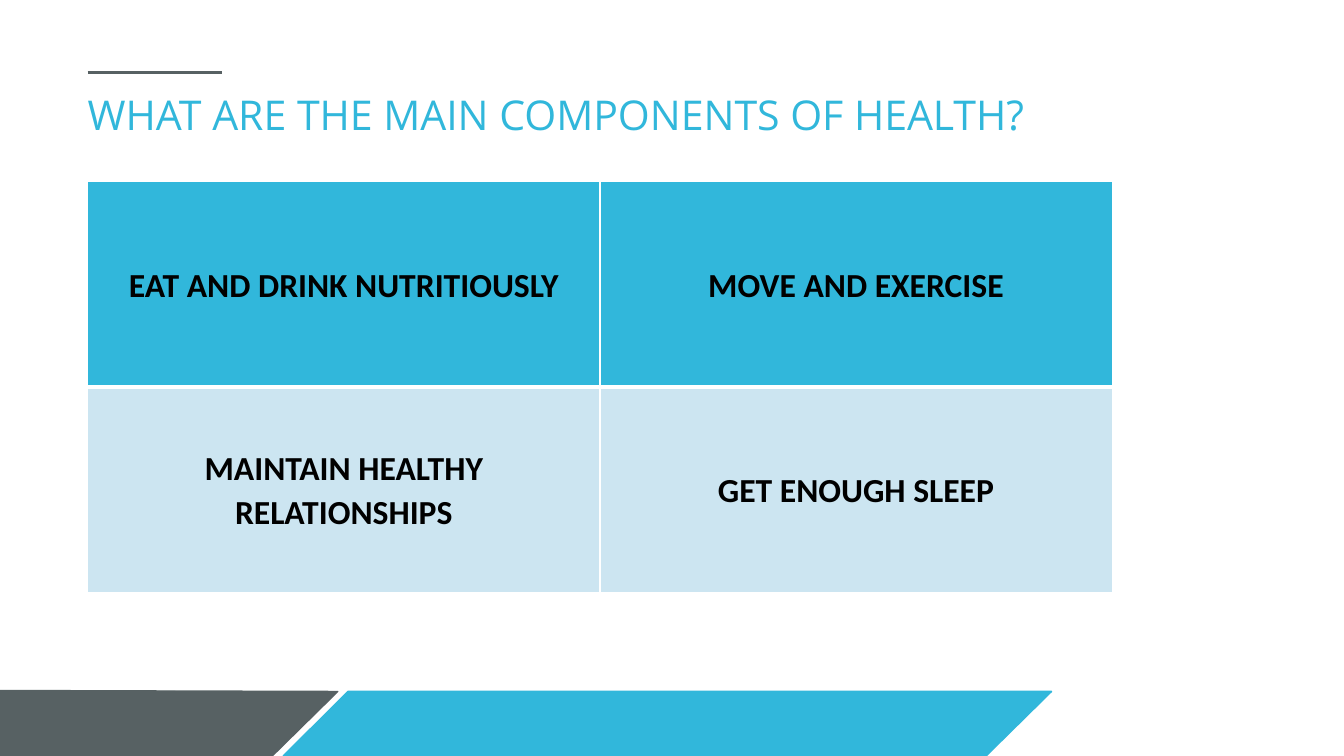
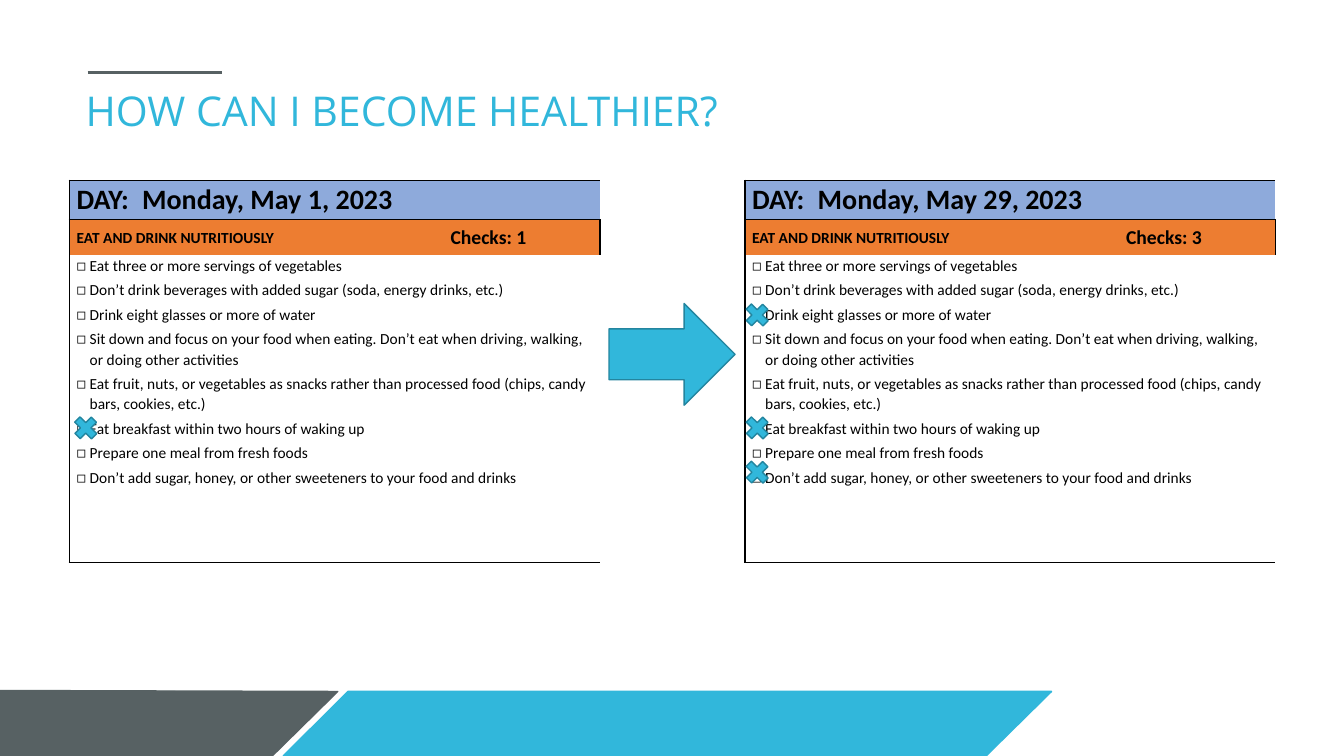
from dataclasses import dataclass

from lxml import etree
from pptx import Presentation
from pptx.dml.color import RGBColor
from pptx.enum import shapes, text
from pptx.oxml import ns
from pptx.util import Emu, Pt


@dataclass(frozen=True)
class Theme:
    blue: str = "31B7DB"
    blue_edge: str = "23859F"
    pale: str = "CCE5F1"
    grey: str = "576163"
    white: str = "FFFFFF"
    black: str = "000000"
    day: str = "8EAADB"
    category: str = "ED7D31"
    title_font: str = "Open Sans"
    body_font: str = "Calibri"
    title_size: float = 29.3
    component_size: int = 24
    day_size: int = 20
    checks_size: int = 14
    small_size: int = 11
    spacing: float = 1.07


THEME = Theme()
SLIDE_SIZE = (1333, 750)
BANDS = [
    (THEME.blue, [(281, 750), (345, 686), (1043, 686), (975, 753)]),
    (THEME.grey, [(-4, 752), (-3, 685), (335, 686), (267, 753)]),
]

COMPONENTS = {
    "title": "WHAT ARE THE MAIN COMPONENTS OF HEALTH?",
    "title_at": (87, 89),
    "rows": [
        ("EAT AND DRINK NUTRITIOUSLY", "MOVE AND EXERCISE"),
        ("MAINTAIN HEALTHY RELATIONSHIPS", "GET ENOUGH SLEEP"),
    ],
}
PROGRESS = {
    "title": "HOW CAN I BECOME HEALTHIER?",
    "title_at": (85, 85),
    "category": "EAT AND DRINK NUTRITIOUSLY",
    "habits": [
        "Eat three or more servings of vegetables",
        "Don’t drink beverages with added sugar (soda, energy drinks, etc.)",
        "Drink eight glasses or more of water",
        "Sit down and focus on your food when eating. Don’t eat when driving, walking, "
        "or doing other activities",
        "Eat fruit, nuts, or vegetables as snacks rather than processed food "
        "(chips, candy bars, cookies, etc.)",
        "Eat breakfast within two hours of waking up",
        "Prepare one meal from fresh foods",
        "Don’t add sugar, honey, or other sweeteners to your food and drinks",
    ],
    # date, table left, mark left, mark tops
    "days": [
        ("Monday, May 1, 2023", 69, 69, [409]),
        ("Monday, May 29, 2023", 739, 735, [297, 409, 453]),
    ],
}


def px(length):
    return Emu(length * 9144)


def box(*lengths):
    return [px(length) for length in lengths]


def rgb(colour):
    return RGBColor.from_string(colour)


def add_xml(parent, tag, **attributes):
    values = {name: str(value) for name, value in attributes.items()}
    return etree.SubElement(parent, ns.qn(tag), values)


def paint(shape, fill, line):
    shape.shadow.inherit = False
    shape.fill.solid()
    shape.fill.fore_color.rgb = rgb(fill)
    shape.line.color.rgb = rgb(line)
    shape.line.width = Pt(1)


def style_font(paragraph, size, colour, name=THEME.body_font, bold=False):
    values = {"name": name, "size": Pt(size), "bold": bold}
    for attribute, value in values.items():
        setattr(paragraph.font, attribute, value)
    paragraph.font.color.rgb = rgb(colour)


def add_titled_slide(presentation, title, position):
    """Add a slide with the shared bands, rule and title."""
    slide = presentation.slides.add_slide(presentation.slide_layouts[6])
    for colour, points in BANDS:
        corners = [tuple(box(*point)) for point in points]
        builder = slide.shapes.build_freeform(*corners[0])
        builder.add_line_segments(corners[1:], close=True)
        paint(builder.convert_to_shape(), colour, colour)

    rule = slide.shapes.add_connector(
        shapes.MSO_CONNECTOR.STRAIGHT, *box(87, 72, 220, 72))
    rule.line.color.rgb = rgb(THEME.grey)
    rule.line.width = Pt(2.25)
    add_xml(rule.element.spPr, "a:effectLst")

    frame = slide.shapes.add_textbox(*box(*position, 1160, 56)).text_frame
    frame.word_wrap = True
    for side in ("left", "top", "right", "bottom"):
        setattr(frame, f"margin_{side}", 0)
    frame.text = title
    style_font(frame.paragraphs[0], THEME.title_size, THEME.blue, THEME.title_font)
    return slide


def add_plain_table(slide, left, top, widths, heights):
    table = slide.shapes.add_table(
        len(heights), len(widths),
        *box(left, top, sum(widths), sum(heights))).table
    table.first_row = table.horz_banding = False
    for column, width in zip(table.columns, widths):
        column.width = px(width)
    for row, height in zip(table.rows, heights):
        row.height = px(height)
    return table


def style_cell(cell, borders, colour, fill=None, middle=True):
    """Set borders (points by side; none where absent), then fill and margins."""
    properties = cell._tc.get_or_add_tcPr()
    for side in "LRTB":
        width = borders.get(side, 0)
        line = add_xml(properties, f"a:ln{side}", w=Pt(width))
        if width:
            add_xml(add_xml(line, "a:solidFill"), "a:srgbClr", val=colour)
        else:
            add_xml(line, "a:noFill")
    if fill:
        cell.fill.solid()
        cell.fill.fore_color.rgb = rgb(fill)
    else:
        cell.fill.background()
    cell.margin_left = cell.margin_right = px(7)
    cell.margin_top = cell.margin_bottom = 0
    anchors = text.MSO_ANCHOR
    cell.vertical_anchor = anchors.MIDDLE if middle else anchors.TOP


def write_cell(cell, content, size, bold=True, centred=False):
    cell.text = content
    for paragraph in cell.text_frame.paragraphs:
        paragraph.line_spacing = THEME.spacing
        if centred:
            paragraph.alignment = text.PP_ALIGN.CENTER
        style_font(paragraph, size, THEME.black, bold=bold)


def add_component_grid(slide, rows):
    table = add_plain_table(slide, 87, 180, [508] * 2, [204] * 2)
    looks = [
        (THEME.blue, {"L": 1, "R": 1, "T": 1, "B": 3}),
        (THEME.pale, {"L": 1, "R": 1, "T": 3, "B": 1}),
    ]
    for r, (row, (fill, borders)) in enumerate(zip(rows, looks)):
        for c, component in enumerate(row):
            cell = table.cell(r, c)
            style_cell(cell, borders, THEME.white, fill)
            write_cell(cell, component, THEME.component_size, centred=True)


def add_checklist(slide, left, date, checks, category, habits):
    table = add_plain_table(slide, left, 179, [305, 221], [39, 35, 305])
    looks = [
        (THEME.day, {"T": 1.5, "B": 1}, False),
        (THEME.category, {"T": 1}, True),
        (None, {"B": 1.5}, False),
    ]
    for r, (fill, borders, middle) in enumerate(looks):
        for c, outer in enumerate("LR"):
            style_cell(table.cell(r, c), {**borders, outer: 1.5},
                       THEME.black, fill, middle)
    for r in (0, 2):
        table.cell(r, 0).merge(table.cell(r, 1))

    day_cell, habit_cell = table.cell(0, 0), table.cell(2, 0)
    write_cell(day_cell, f"DAY:\t{date}", THEME.day_size)
    day_properties = day_cell.text_frame.paragraphs[0]._p.get_or_add_pPr()
    add_xml(add_xml(day_properties, "a:tabLst"), "a:tab", pos=px(65), algn="l")
    write_cell(table.cell(1, 0), category, THEME.small_size)
    write_cell(table.cell(1, 1), f"Checks: {checks}", THEME.checks_size, centred=True)

    habit_cell.text = "\n".join(habits)
    for i, paragraph in enumerate(habit_cell.text_frame.paragraphs):
        properties = paragraph._p.get_or_add_pPr()
        properties.set("marL", str(px(13)))
        properties.set("indent", str(-px(13)))
        add_xml(properties, "a:buFont", typeface=THEME.body_font)
        add_xml(properties, "a:buChar", char="◻")
        paragraph.line_spacing = THEME.spacing
        paragraph.space_before = Pt(3 if i else 0)
        style_font(paragraph, THEME.small_size, THEME.black)


def add_mark(slide, left, top):
    mark = slide.shapes.add_shape(
        shapes.MSO_SHAPE.MATH_PLUS, *box(left, top, 32, 31))
    mark.rotation = 45
    paint(mark, THEME.blue, THEME.blue_edge)


def main():
    presentation = Presentation()
    presentation.slide_width, presentation.slide_height = box(*SLIDE_SIZE)

    slide = add_titled_slide(
        presentation, COMPONENTS["title"], COMPONENTS["title_at"])
    add_component_grid(slide, COMPONENTS["rows"])

    slide = add_titled_slide(presentation, PROGRESS["title"], PROGRESS["title_at"])
    for date, left, _, tops in PROGRESS["days"]:
        add_checklist(slide, left, date, len(tops),
                      PROGRESS["category"], PROGRESS["habits"])
    arrow = slide.shapes.add_shape(
        shapes.MSO_SHAPE.RIGHT_ARROW, *box(604, 301, 125, 101))
    paint(arrow, THEME.blue, THEME.blue_edge)
    for _, _, left, tops in PROGRESS["days"]:
        for top in tops:
            add_mark(slide, left, top)

    presentation.save("out.pptx")


if __name__ == "__main__":
    main()
